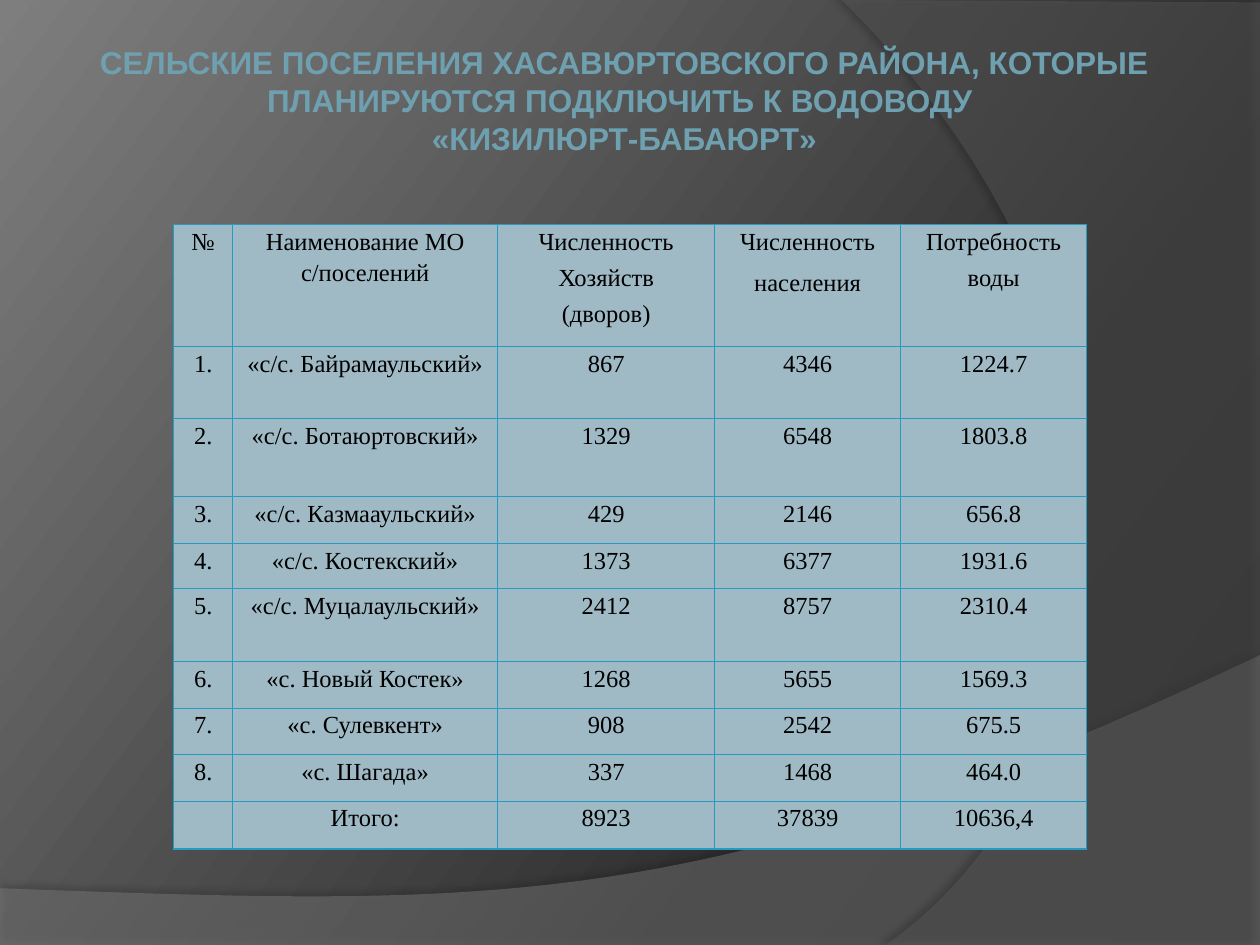
from copy import deepcopy

from lxml.etree import SubElement
from pptx import Presentation
from pptx.dml.color import RGBColor
from pptx.enum.text import MSO_ANCHOR, PP_ALIGN
from pptx.oxml.ns import qn
from pptx.util import Pt

COLORS = {
    "title": "6EA0B0", "text": "000000", "cell": "9FBAC5", "border": "239BC2",
    "lower_wave": "7F7F7F", "right_wave": "5E5E5E", "shadow": "000000",
}
GRADIENT = [(0, "282828"), (0.3, "2F2F2F"), (1, "7E7E7E")]
COLUMN_WIDTHS = [33.8, 151.4, 124, 106.3, 106.3]
ROW_HEIGHTS = [69.7, 41.2, 44.6, 26.8, 25.8, 41.6, 26.8, 26.4, 26.8, 27.4]
SPACE_AFTER = [0, 0, 3, 6, 3]
TITLE = [
    "СЕЛЬСКИЕ ПОСЕЛЕНИЯ ХАСАВЮРТОВСКОГО РАЙОНА, КОТОРЫЕ ПЛАНИРУЮТСЯ ПОДКЛЮЧИТЬ К ВОДОВОДУ ",
    "«КИЗИЛЮРТ-БАБАЮРТ»",
]
ROWS = [
    ["№", "Наименование МО с/поселений", "Численность\nХозяйств\n(дворов)",
     "Численность\nнаселения", "Потребность\nводы"],
    ["1.", "«с/с. Байрамаульский»", "867", "4346", "1224.7"],
    ["2.", "«с/с. Ботаюртовский»", "1329", "6548", "1803.8"],
    ["3.", "«с/с. Казмааульский»", "429", "2146", "656.8"],
    ["4.", "«с/с. Костекский»", "1373", "6377", "1931.6"],
    ["5.", "«с/с. Муцалаульский»", "2412", "8757", "2310.4"],
    ["6.", "«с. Новый Костек»", "1268", "5655", "1569.3"],
    ["7.", "«с. Сулевкент»", "908", "2542", "675.5"],
    ["8.", "«с. Шагада»", "337", "1468", "464.0"],
    ["", "Итого:", "8923", "37839", "10636,4"],
]


def rgb(value):
    """Turn a hex string into a colour."""
    return RGBColor.from_string(value)


def write_text(frame, lines, font, size, color, bold=False, spacing=1.0, after=0):
    """Write centred paragraphs into a text frame."""
    for index, line in enumerate(lines):
        paragraph = frame.add_paragraph() if index else frame.paragraphs[0]
        paragraph.alignment = PP_ALIGN.CENTER
        paragraph.line_spacing = spacing
        paragraph.space_after = Pt(after)
        run = paragraph.add_run()
        run.text = line
        run.font.name, run.font.size, run.font.bold = font, Pt(size), bold
        run.font.color.rgb = rgb(COLORS[color])


def paint_background(slide):
    """Fill the slide with the diagonal grey gradient."""
    fill = slide.background.fill
    fill.gradient()
    fill.gradient_angle = 143
    stops = slide.element.find(".//" + qn("a:gsLst"))
    stops.append(deepcopy(stops[0]))
    for stop, (position, color) in zip(fill.gradient_stops, GRADIENT):
        stop.position = position
        stop.color.rgb = rgb(color)


def curve(start, control_a, control_b, end, steps=40):
    """Return points along a cubic Bezier curve."""
    weights = [((1 - t) ** 3, 3 * t * (1 - t) ** 2, 3 * t * t * (1 - t), t ** 3)
               for t in (step / steps for step in range(steps + 1))]
    anchors = (start, control_a, control_b, end)
    return [tuple(sum(w * p[axis] for w, p in zip(row, anchors)) for axis in (0, 1))
            for row in weights]


def add_wave(slide, left, top, points, color, alpha, shadow_alpha, distance, direction):
    """Draw a translucent wave with a soft shadow, relative to its box."""
    builder = slide.shapes.build_freeform(
        Pt(left + points[0][0]), Pt(top + points[0][1]), scale=1.0)
    builder.add_line_segments([(Pt(left + x), Pt(top + y)) for x, y in points[1:]])
    shape = builder.convert_to_shape()
    shape.fill.solid()
    shape.fill.fore_color.rgb = rgb(COLORS[color])
    shape.line.fill.background()
    shape.shadow.inherit = False
    properties = shape.element.spPr
    fill_color = properties.find(qn("a:solidFill"))[0]
    SubElement(fill_color, qn("a:alpha"), val=str(alpha * 1000))
    shadow = SubElement(
        properties.find(qn("a:effectLst")), qn("a:outerShdw"), blurRad=str(Pt(4)),
        dist=str(Pt(distance)), dir=str(direction * 60000), rotWithShape="0")
    shadow_color = SubElement(shadow, qn("a:srgbClr"), val=COLORS["shadow"])
    SubElement(shadow_color, qn("a:alpha"), val=str(shadow_alpha * 1000))


def add_waves(slide):
    """Place the lower and right decorative waves."""
    lower = [(0, 166), (720, 166)] + curve((720, 0), (402.5, 150.5), (281.5, 143.3), (0, 133.2))
    right = [(239, 1.4), (239, 540)] + curve((25.2, 540), (160.6, 445.7), (200.9, 198), (0, 0))
    add_wave(slide, 0, 374.4, lower, "lower_wave", 45, 35, 3.5, 270)
    add_wave(slide, 481, 0, right, "right_wave", 40, 45, 4, 180)


def add_title(slide, left, top, width, height):
    """Place the title above the decoration."""
    title = slide.shapes.title
    title.left, title.top, title.width, title.height = map(Pt, (left, top, width, height))
    title.text_frame.word_wrap = True
    title.text_frame.vertical_anchor = MSO_ANCHOR.MIDDLE
    write_text(title.text_frame, TITLE, "Arial", 18, "title", bold=True)
    slide.shapes.element.append(title.element)


def format_cell(cell):
    """Set the margins, borders and fill of a cell."""
    cell.margin_left = cell.margin_right = Pt(5)
    cell.margin_top = cell.margin_bottom = 0
    for side in ("a:lnL", "a:lnR", "a:lnT", "a:lnB"):
        line = SubElement(cell._tc.get_or_add_tcPr(), qn(side), w=str(Pt(0.75)))
        SubElement(SubElement(line, qn("a:solidFill")), qn("a:srgbClr"), val=COLORS["border"])
    cell.fill.solid()
    cell.fill.fore_color.rgb = rgb(COLORS["cell"])


def add_settlements(slide, left, top):
    """Place the table of settlements."""
    table = slide.shapes.add_table(
        len(ROWS), len(COLUMN_WIDTHS), Pt(left), Pt(top),
        Pt(sum(COLUMN_WIDTHS)), Pt(sum(ROW_HEIGHTS))).table
    table.first_row = table.horz_banding = False
    for column, width in zip(table.columns, COLUMN_WIDTHS):
        column.width = Pt(width)
    for row, height, values in zip(table.rows, ROW_HEIGHTS, ROWS):
        row.height = Pt(height)
        for cell, value, after in zip(row.cells, values, SPACE_AFTER):
            format_cell(cell)
            if value:
                write_text(cell.text_frame, value.split("\n"), "Times New Roman", 14,
                           "text", spacing=1.15, after=after)


def main():
    """Build and save the presentation."""
    presentation = Presentation()
    presentation.slide_width, presentation.slide_height = Pt(720), Pt(540)
    slide = presentation.slides.add_slide(presentation.slide_layouts[5])
    paint_background(slide)
    add_waves(slide)
    add_title(slide, 25.2, 20.9, 663.1, 72.7)
    add_settlements(slide, 99.2, 128.2)
    presentation.save("out.pptx")


if __name__ == "__main__":
    main()
